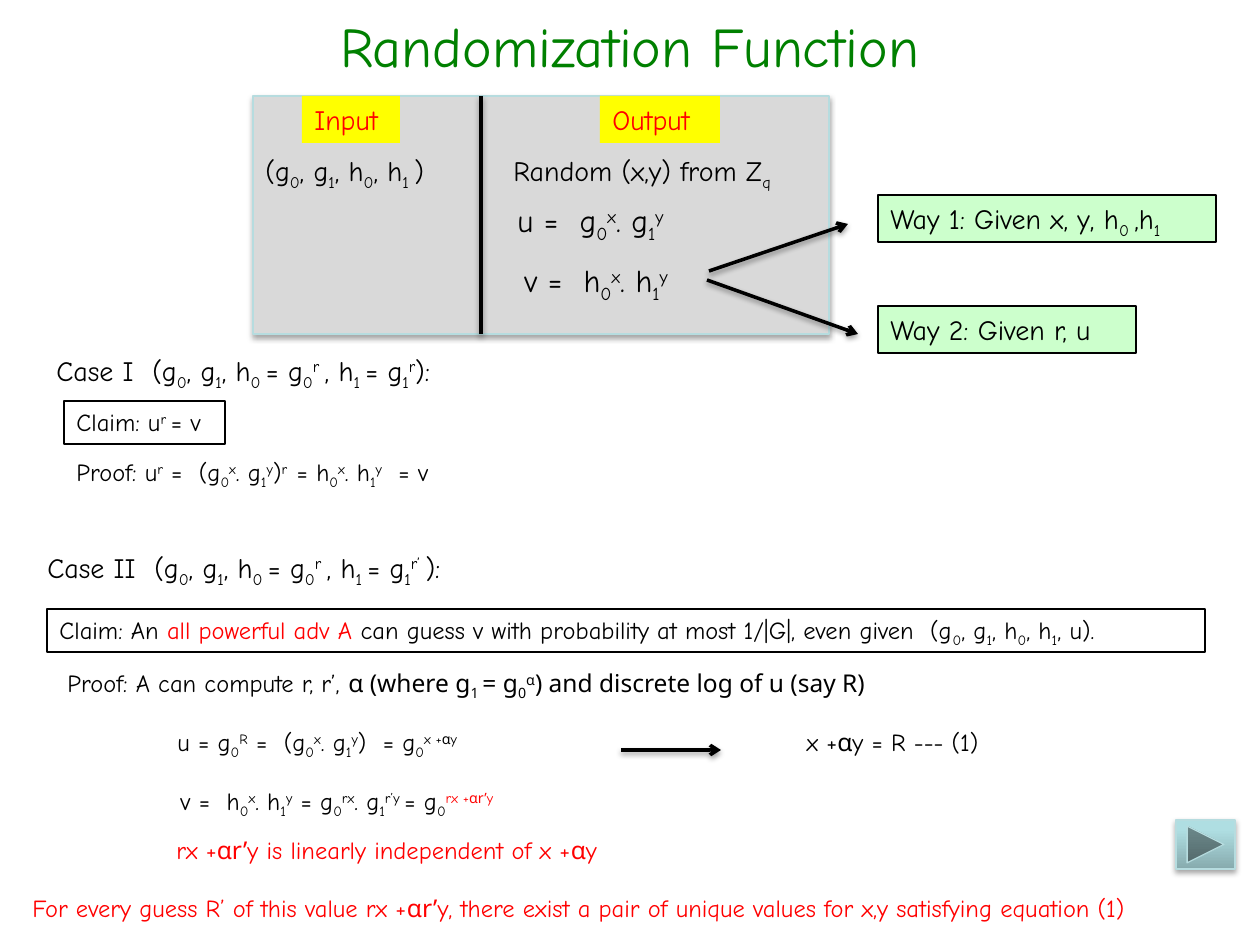
from lxml import etree
from pptx import Presentation
from pptx.dml.color import RGBColor
from pptx.enum.shapes import MSO_CONNECTOR, MSO_SHAPE
from pptx.enum.text import MSO_ANCHOR, MSO_AUTO_SIZE, PP_ALIGN
from pptx.oxml.ns import qn
from pptx.util import Pt

STRAIGHT = MSO_CONNECTOR.STRAIGHT
RECTANGLE = MSO_SHAPE.RECTANGLE
NEXT_BUTTON = MSO_SHAPE.ACTION_BUTTON_FORWARD_OR_NEXT

PX = 914400 / 126
THEME = {
    "font": "Comic Neue", "greek_font": "Noto Sans",
    "title": "008000", "ink": "000000", "accent": "FF0000",
    "panel": "D9D9D9", "edge": "B6DCDF", "header": "FFFF00", "way": "CCFFCC",
    "button": ("87ABAE", "AFDEE2"),
    "title_size": 32, "formula": 18, "heading": 16, "body": 14,
    "thin": 0.75, "thick": 2,
}
BOX_HEIGHT = {"formula": 50, "heading": 47, "body": 43}

# Content. Marks switch a style on and off:
# _ subscript, ^ superscript, ~ Greek font, * accent colour
TITLE = "Randomization Function"
PANEL = (253, 96, 576, 238)
NEXT = (1176, 820, 59, 49)

# (left, top, width, size, text)
NOTES = [
    (253, 147, 207, "heading", "(g_0_, g_1_, h_0_, h_1 _)"),
    (501, 147, 310, "heading", "Random (x,y) from Z_q_"),
    (505, 195, 184, "formula", "u =  g_0_^x^. g_1_^y^"),
    (512, 255, 186, "formula", "v =  h_0_^x^. h_1_^y^"),
    (44, 347, 440, "heading",
     "Case I  (g_0_, g_1_, h_0 _= g_0_^r ^, h_1 _= g_1_^r^):"),
    (64, 451, 416, "body",
     "Proof: u^r^ =  (g_0_^x^. g_1_^y^)^r  ^= h_0_^x^. h_1_^y^  = v"),
    (35, 544, 466, "heading",
     "Case II  (g_0_, g_1_, h_0 _= g_0_^r ^, h_1 _= g_1_^r’ ^):"),
    (55, 662, 895, "body",
     "Proof: A can compute r, r’, ~α (where g_1 _= g_0_^α^) "
     "and discrete log of u (say R)~"),
    (165, 721, 324, "body",
     "u = g_0_^R^ =  (g_0_^x^. g_1_^y^)  = g_0_^x +~α~y^"),
    (786, 721, 214, "body", " x +~α~y = R --- (1)"),
    (168, 780, 383, "body",
     "v =  h_0_^x^. h_1_^y^ = g_0_^rx^. g_1_^r’y ^= g_0_*^rx +~αr’~y^*"),
]
CONCLUSIONS = [
    (164, 829, 764, "body",
     "*rx +~αr’~y is linearly independent of x +~α~y*"),
    (20, 887, 1245, "body",
     "*For every guess R’ of this value rx +~αr’~y, there exist a pair of "
     "unique values for x,y satisfying equation (1)*"),
]
CLAIMS = [
    (64, 401, 161, "body", "Claim: u^r ^= v"),
    (47, 609, 1158, "body",
     "Claim: An *all powerful adv A *can guess v with probability at most "
     "1/|G|, even given  (g_0_, g_1_, h_0_, h_1_, u)."),
]
WAYS = [
    (878, 195, 338, "heading", "Way 1: Given x, y, h_0 _,h_1_"),
    (878, 306, 258, "heading", "Way 2: Given r, u"),
]
HEADERS = [
    (302, 96, 98, "heading", "*Input*"),
    (600, 96, 120, "heading", "*Output*"),
]
DIVIDER = (481, 96, 481, 334)
ARROWS = [(621, 750, 721, 750), (709, 271, 848, 224), (707, 280, 858, 334)]


def emu(*lengths):
    return [round(length * PX) for length in lengths]


def colour(name):
    return RGBColor.from_string(THEME.get(name, name))


def split_styles(text):
    """Yield (words, active marks) for each stretch of one style."""
    active, words = set(), ""
    for letter in text:
        if letter not in "_^~*":
            words += letter
            continue
        if words:
            yield words, frozenset(active)
        active ^= {letter}
        words = ""
    if words:
        yield words, frozenset(active)


def write(frame, text, size, ink="ink", align=PP_ALIGN.LEFT):
    para = frame.paragraphs[0]
    para.alignment = align
    for words, marks in split_styles(text):
        span = para.add_run()
        span.text = words
        font = span.font
        font.size = Pt(THEME[size])
        font.name = THEME["greek_font" if "~" in marks else "font"]
        font.color.rgb = colour("accent" if "*" in marks else ink)
        for mark, offset in (("_", "-25000"), ("^", "30000")):
            if mark in marks:
                span._r.get_or_add_rPr().set("baseline", offset)


def add_text(page, item, fill=None, line=None, wrap=False):
    left, top, width, size, text = item
    box = page.shapes.add_textbox(*emu(left, top, width, BOX_HEIGHT[size]))
    if fill:
        box.fill.solid()
        box.fill.fore_color.rgb = colour(fill)
    if line:
        box.line.color.rgb = colour(line)
        box.line.width = Pt(THEME["thin"])
    frame = box.text_frame
    frame.word_wrap = wrap
    frame.auto_size = MSO_AUTO_SIZE.SHAPE_TO_FIT_TEXT
    write(frame, text, size)


def add_shadow(shape, distance, opacity):
    effects = etree.SubElement(shape._element.spPr, qn("a:effectLst"))
    shadow = etree.SubElement(effects, qn("a:outerShdw"), blurRad="40000",
                              dist=str(distance), dir="5400000", rotWithShape="0")
    tint = etree.SubElement(shadow, qn("a:srgbClr"), val=THEME["ink"])
    etree.SubElement(tint, qn("a:alpha"), val=str(opacity * 1000))


def add_line(page, ends, arrow=False):
    line = page.shapes.add_connector(STRAIGHT, *emu(*ends))
    line.line.color.rgb = colour("ink")
    line.line.width = Pt(THEME["thick"])
    if arrow:
        etree.SubElement(line.line._get_or_add_ln(), qn("a:tailEnd"), type="arrow")
    add_shadow(line, 20000, 38)


def add_block(page, kind, place):
    block = page.shapes.add_shape(kind, *emu(*place))
    block.line.color.rgb = colour("edge")
    block.line.width = Pt(THEME["thin"])
    add_shadow(block, 23000, 35)
    return block


def main():
    deck = Presentation()
    deck.slide_width, deck.slide_height = emu(1260, 945)
    page = deck.slides.add_slide(deck.slide_layouts[5])

    # Title
    title = page.shapes.title
    title.left, title.top, title.width, title.height = emu(63, -34, 1134, 158)
    title.text_frame.vertical_anchor = MSO_ANCHOR.MIDDLE
    write(title.text_frame, TITLE, "title_size", "title", PP_ALIGN.CENTER)

    # Input and output panel
    panel = add_block(page, RECTANGLE, PANEL)
    panel.fill.solid()
    panel.fill.fore_color.rgb = colour("panel")
    add_line(page, DIVIDER)

    # Formulas, claims and the two ways
    for items, style in (
        (NOTES, {}),
        (CLAIMS, {"line": "ink"}),
        (WAYS, {"fill": "way", "line": "ink", "wrap": True}),
        (CONCLUSIONS, {"wrap": True}),
        (HEADERS, {"fill": "header"}),
    ):
        for item in items:
            add_text(page, item, **style)
    for ends in ARROWS:
        add_line(page, ends, arrow=True)

    # Next button, shaded from dark at the bottom to light at the top
    button = add_block(page, NEXT_BUTTON, NEXT)
    button.fill.gradient()
    button.fill.gradient_angle = 90
    for stop, tint, position in zip(button.fill.gradient_stops,
                                    THEME["button"], (0, 0.8)):
        stop.color.rgb = colour(tint)
        stop.position = position

    deck.save("out.pptx")


if __name__ == "__main__":
    main()
